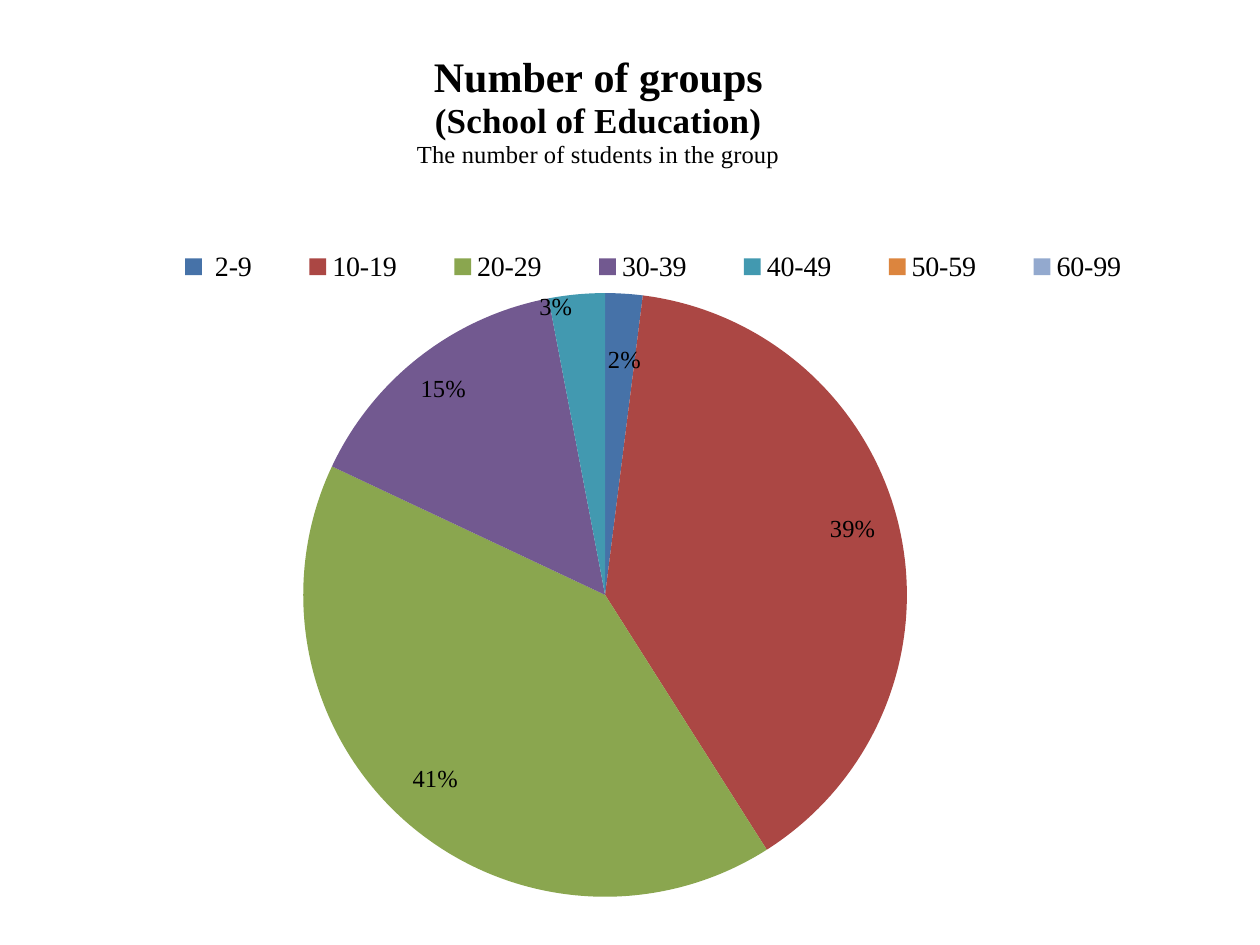
from lxml import etree
from pptx import Presentation
from pptx.chart.data import CategoryChartData
from pptx.dml.color import RGBColor
from pptx.enum.chart import XL_CHART_TYPE, XL_LABEL_POSITION, XL_LEGEND_POSITION
from pptx.oxml import parse_xml
from pptx.oxml.ns import nsdecls, qn
from pptx.util import Pt

GROUPS = {" 2-9": 2, "10-19": 39, "20-29": 41, "30-39": 15,
          "40-49": 3, "50-59": None, "60-99": None}
# Shift of each percentage towards the centre, in points
SHIFTS = [(0, 50), (-44, 9), (33, -35), (29, 30), (-2, 19)]
TITLE = [("Number of groups", 24, True),
         ("(School of Education)", 20, True),
         ("The number of students in the group", 14, False)]


def color(value):
    return RGBColor.from_string(value)


def style_font(font, size, bold=False, name="Times New Roman", fill="000000"):
    font.name, font.size, font.bold = name, Pt(size), bold
    font.color.rgb = color(fill)


def add_text(p, text, **style):
    r = p.add_run()
    r.text = text
    style_font(r.font, **style)


def set_layout(parent, successor, modes=("xMode", "yMode"), inner=False, **box):
    """Place a chart part by fractions of the chart area."""
    for old in parent.findall(qn("c:layout")):
        parent.remove(old)
    layout = parse_xml(f"<c:layout {nsdecls('c')}><c:manualLayout/></c:layout>")
    items = [("layoutTarget", "inner")] if inner else []
    items += [(mode, "edge") for mode in modes] + list(box.items())
    for tag, value in items:
        etree.SubElement(layout[0], qn(f"c:{tag}")).set("val", str(value))
    parent.find(qn(f"c:{successor}")).addprevious(layout)


class Deck:
    def __init__(self):
        self.prs = Presentation()
        self.prs.slide_width, self.prs.slide_height = Pt(720), Pt(540)
        self.s = self.prs.slides.add_slide(self.prs.slide_layouts[6])

    def pie(self, groups, title, shifts, left, top, width, height):
        data = CategoryChartData()
        data.categories = list(groups)
        data.add_series("Series 1", list(groups.values()))
        chart = self.s.shapes.add_chart(
            XL_CHART_TYPE.PIE, Pt(left), Pt(top), Pt(width), Pt(height), data).chart
        style_font(chart.font, 10, name="Calibri")

        # Title
        tf = chart.chart_title.text_frame
        for i, (text, size, bold) in enumerate(title):
            p = tf.add_paragraph() if i else tf.paragraphs[0]
            add_text(p, text, size=size, bold=bold)
        chart.chart_title.include_in_layout = False
        set_layout(chart.chart_title._element, "overlay", x=0.32, y=0.01)

        # Legend
        chart.has_legend = True
        legend = chart.legend
        legend.position = XL_LEGEND_POSITION.TOP
        legend.include_in_layout = False
        style_font(legend.font, 16)
        set_layout(legend._element, "overlay", x=0.09, y=0.23, w=0.86, h=0.06)

        # Slices take the theme accents, one for each group
        plot = chart.plots[0]
        plot.vary_by_categories = True
        set_layout(plot._element.getparent(), "pieChart", inner=True,
                   x=0.22, y=0.29, w=0.52, h=0.69)

        # Percentages
        series = plot.series[0]
        labels = series.data_labels
        labels.show_percentage, labels.show_value = True, False
        labels.number_format, labels.number_format_is_linked = "0%", False
        labels.position = XL_LABEL_POSITION.BEST_FIT
        style_font(labels.font, 14)
        for i, (dx, dy) in enumerate(shifts):
            label = series.points[i].data_label
            style_font(label.font, 14)
            label.position = XL_LABEL_POSITION.BEST_FIT
            d = labels._element.findall(qn("c:dLbl"))[i]
            d.find(qn("c:showVal")).set("val", "0")
            d.find(qn("c:showPercent")).set("val", "1")
            set_layout(d, "txPr" if d.find(qn("c:spPr")) is None else "spPr",
                       modes=(), x=dx / width, y=dy / height)


if __name__ == "__main__":
    deck = Deck()
    deck.pie(GROUPS, TITLE, SHIFTS, left=16.5, top=22.5, width=686, height=500)
    deck.prs.save("out.pptx")
